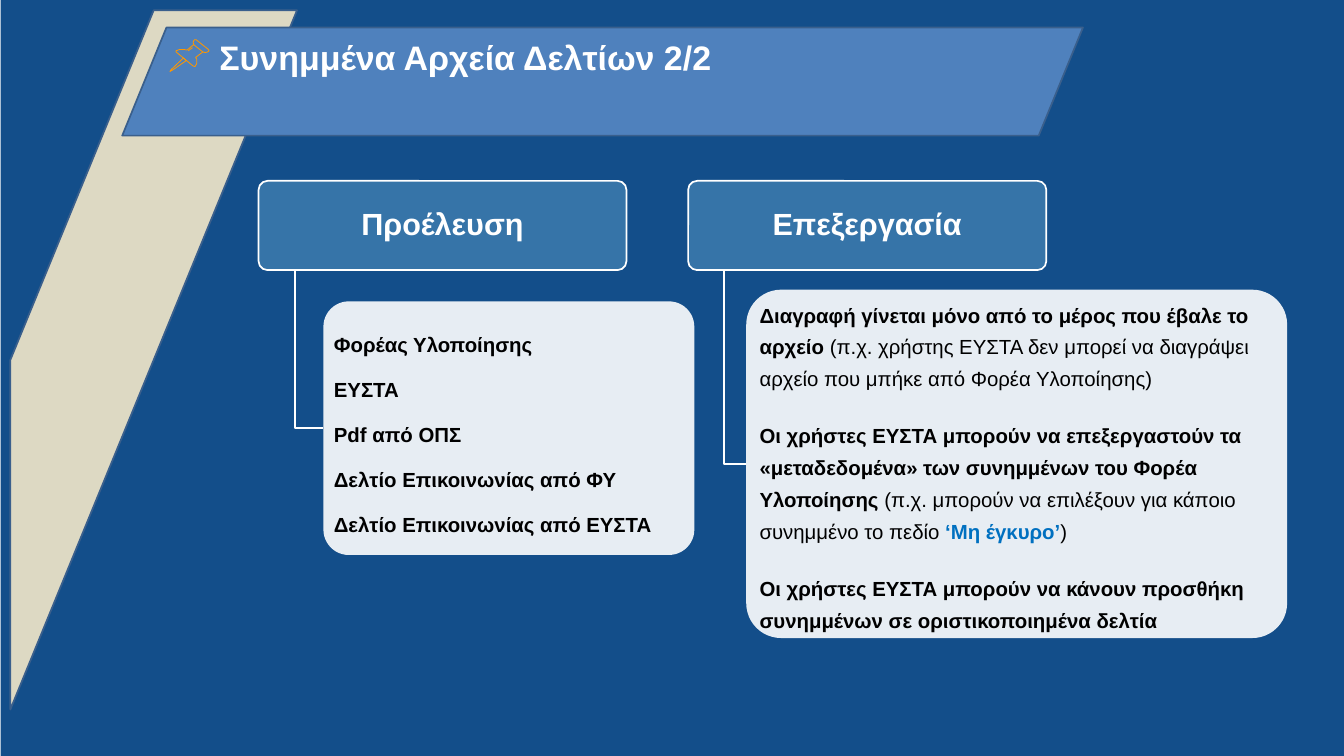
from lxml import etree
from pptx import Presentation
from pptx.dml.color import RGBColor
from pptx.enum.shapes import MSO_CONNECTOR, MSO_SHAPE
from pptx.enum.text import MSO_ANCHOR, PP_ALIGN
from pptx.oxml.ns import qn
from pptx.util import Pt

STRAIGHT = MSO_CONNECTOR.STRAIGHT
RECTANGLE = MSO_SHAPE.RECTANGLE
ROUNDED = MSO_SHAPE.ROUNDED_RECTANGLE
STRIPE = MSO_SHAPE.DIAGONAL_STRIPE
PARALLELOGRAM = MSO_SHAPE.PARALLELOGRAM
MIDDLE = MSO_ANCHOR.MIDDLE
LEFT, CENTER = PP_ALIGN.LEFT, PP_ALIGN.CENTER

NAVY = RGBColor(0x13, 0x4E, 0x8A)
SAND = RGBColor(0xDD, 0xD9, 0xC3)
BANNER_BLUE = RGBColor(0x4F, 0x81, 0xBD)
EDGE_BLUE = RGBColor(0x3A, 0x5F, 0x8C)
HEADING_BLUE = RGBColor(0x36, 0x74, 0xA8)
ACCENT_BLUE = RGBColor(0x00, 0x70, 0xC0)
ORANGE = RGBColor(0xFF, 0x98, 0x00)
WHITE = RGBColor(0xFF, 0xFF, 0xFF)
BLACK = RGBColor(0x00, 0x00, 0x00)
FONT = "Arial"

prs = Presentation()
prs.slide_width, prs.slide_height = Pt(1583.28), Pt(890.64)
slide = prs.slides.add_slide(prs.slide_layouts[6])
shapes = slide.shapes


def add_block(preset, box, fill, edge=None):
    block = shapes.add_shape(preset, *[Pt(v) for v in box])
    block.shadow.inherit = False
    block.fill.solid()
    block.fill.fore_color.rgb = fill
    if edge is None:
        block.line.fill.background()
    else:
        block.line.color.rgb = edge
        block.line.width = Pt(2)
    return block


def add_outline(points, color, width, close):
    start, *rest = [(Pt(x), Pt(y)) for x, y in points]
    builder = shapes.build_freeform(*start)
    builder.add_line_segments(rest, close=close)
    outline = builder.convert_to_shape()
    outline.shadow.inherit = False
    outline.fill.background()
    outline.line.color.rgb = color
    outline.line.width = Pt(width)


add_block(RECTANGLE, (0.72, 0, 1582.56, 890.64), NAVY)
add_block(STRIPE, (12.2, 12.2, 337.7, 823.7), SAND, EDGE_BLUE)
banner = add_block(PARALLELOGRAM, (144, 32.4, 1131.8, 127.4), BANNER_BLUE, EDGE_BLUE)
banner.adjustments[0] = 0.409

title = shapes.add_textbox(Pt(251.3), Pt(39.6), Pt(982.8), Pt(55.4)).text_frame
title.word_wrap = True
title_line = title.paragraphs[0]
title_line.text = "Συνημμένα Αρχεία Δελτίων 2/2"
title_line.font.name, title_line.font.size = FONT, Pt(40)
title_line.font.bold = True
title_line.font.color.rgb = WHITE

pin_needle = [(216, 68.4), (201.6, 82.1), (200.2, 84.2), (203, 82.8), (219.6, 71.3)]
pin_head = [(228.2, 52.6), (239, 61.2), (241.9, 61.9), (244.8, 61.2), (246.2, 59.8),
            (245.5, 58.3), (231.1, 46.8), (229, 46.8), (227.5, 49.7)]
pin_body = [(228.2, 52.6), (220.3, 59), (216.7, 58.3), (211.7, 58.3), (207.4, 59.8),
            (207.4, 61.2), (227.5, 77.8), (229.7, 78.5), (231.8, 74.9), (231.8, 69.8),
            (230.4, 67.7), (239, 61.2)]
for points, close in [(pin_needle, True), (pin_head, True), (pin_body, False)]:
    add_outline(points, ORANGE, 0.96, close)
pin_ridge = shapes.add_connector(STRAIGHT, Pt(221.8), Pt(59.8), Pt(226.8), Pt(56.2))
pin_ridge.line.color.rgb = ORANGE
pin_ridge.line.width = Pt(0.96)
etree.SubElement(pin_ridge._element.spPr, qn("a:effectLst"))

origins = ["Φορέας Υλοποίησης", "ΕΥΣΤΑ", "Pdf από ΟΠΣ",
           "Δελτίο Επικοινωνίας από ΦΥ", "Δελτίο Επικοινωνίας από ΕΥΣΤΑ"]
rules = [
    [("Διαγραφή γίνεται μόνο από το μέρος που έβαλε το αρχείο", True, BLACK),
     (" (π.χ. χρήστης ΕΥΣΤΑ δεν μπορεί να διαγράψει αρχείο που μπήκε από "
      "Φορέα Υλοποίησης)", False, BLACK)],
    [("Οι χρήστες ΕΥΣΤΑ μπορούν να επεξεργαστούν τα «μεταδεδομένα» των "
      "συνημμένων του Φορέα Υλοποίησης", True, BLACK),
     (" (π.χ. μπορούν να επιλέξουν για κάποιο συνημμένο το πεδίο ", False, BLACK),
     ("‘Μη έγκυρο’", True, ACCENT_BLUE),
     (")", False, BLACK)],
    [("Οι χρήστες ΕΥΣΤΑ μπορούν να κάνουν προσθήκη συνημμένων σε "
      "οριστικοποιημένα δελτία", True, BLACK)],
]
HEADING_TOP, HEADING_HEIGHT = 213.1, 105.1
columns = [
    ("Προέλευση", 304.6, 433.4, (381, 355, 437, 298.8),
     [[(origin, True, BLACK)] for origin in origins], 1.5, 10),
    ("Επεξεργασία", 810.7, 421.9, (879.1, 341.3, 637.2, 410.4), rules, 1.3, 30),
]
for heading, left, width, detail_box, entries, spacing, gap in columns:
    heading_box = add_block(ROUNDED, (left, HEADING_TOP, width, HEADING_HEIGHT),
                            HEADING_BLUE, WHITE)
    heading_box.adjustments[0] = 0.1
    heading_frame = heading_box.text_frame
    heading_frame.vertical_anchor = MIDDLE
    heading_line = heading_frame.paragraphs[0]
    heading_line.text = heading
    heading_line.alignment = CENTER
    heading_line.line_spacing = 0.9
    heading_line.font.name, heading_line.font.size = FONT, Pt(36)
    heading_line.font.bold = True
    heading_line.font.color.rgb = WHITE

    detail_left, detail_top, _, detail_height = detail_box
    branch_x = left + width / 10
    branch_y = detail_top + detail_height / 2
    add_outline([(branch_x, HEADING_TOP + HEADING_HEIGHT), (branch_x, branch_y),
                 (detail_left, branch_y)], WHITE, 2, False)

    detail = add_block(ROUNDED, detail_box, WHITE)
    detail.adjustments[0] = 0.1
    fill_color = detail._element.spPr.find(qn("a:solidFill"))[0]
    etree.SubElement(fill_color, qn("a:alpha"), val="90000")
    frame = detail.text_frame
    frame.word_wrap = True
    frame.vertical_anchor = MIDDLE
    frame.margin_left = frame.margin_right = Pt(3.6)
    frame.margin_top = frame.margin_bottom = Pt(2.2)
    for index, entry in enumerate(entries):
        line = frame.paragraphs[0] if index == 0 else frame.add_paragraph()
        line.alignment = LEFT
        line.line_spacing = spacing
        if index:
            line.space_before = Pt(gap)
        for words, bold, color in entry:
            run = line.add_run()
            run.text = words
            run.font.bold = bold
            run.font.color.rgb = color
        line.font.name, line.font.size = FONT, Pt(24)

prs.save("out.pptx")
